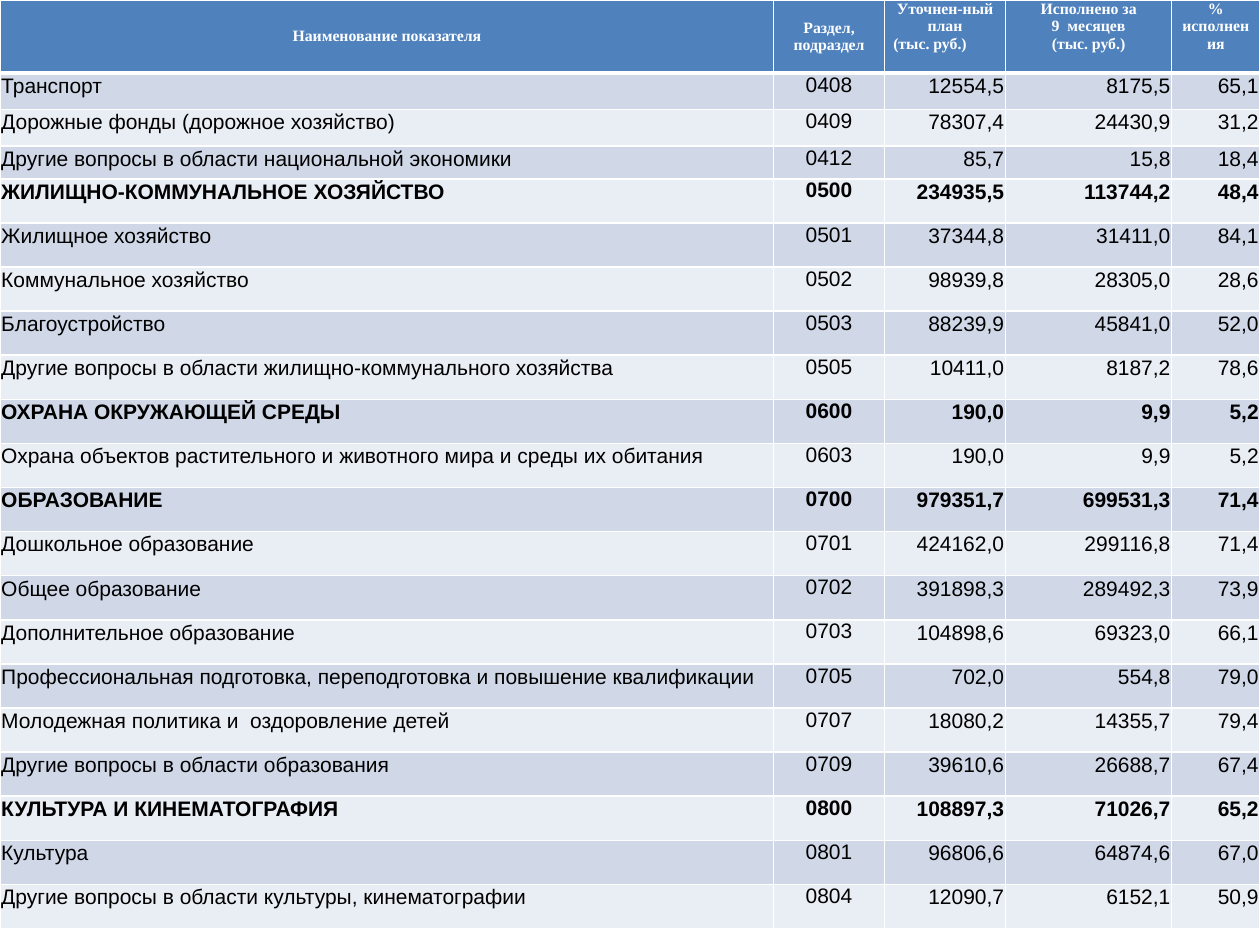
"""Build a slide with a table of budget execution by section."""
from typing import NamedTuple

from lxml.etree import SubElement
from pptx import Presentation
from pptx.dml.color import RGBColor
from pptx.enum.text import MSO_ANCHOR, PP_ALIGN as Align
from pptx.oxml.ns import qn
from pptx.util import Inches, Pt

COLORS = {"header": "4F81BD", "odd": "D0D8E8", "even": "E9EDF4",
          "text": "000000", "white": "FFFFFF"}


class Style(NamedTuple):
    font: str
    size: float
    color: str
    fill: str
    bold: bool


class Column(NamedTuple):
    width: float
    header: tuple[str, ...]
    anchor: MSO_ANCHOR
    align: Align
    margin: float
    top: float


class Item(NamedTuple):
    name: str
    code: str
    plan: str
    actual: str
    percent: str


COLUMNS = [
    Column(6.14, ("Наименование показателя",), MSO_ANCHOR.MIDDLE, Align.LEFT, 0.01, 0.01),
    Column(0.88, ("Раздел, подраздел",), MSO_ANCHOR.MIDDLE, Align.CENTER, 0.07, 0),
    Column(0.96, ("Уточнен-ный план", "(тыс. руб.)"), MSO_ANCHOR.TOP, Align.RIGHT, 0.01, 0.01),
    Column(1.32, ("Исполнено за", "9  месяцев", "(тыс. руб.)"), MSO_ANCHOR.TOP,
           Align.RIGHT, 0.01, 0.01),
    Column(0.7, ("% исполнения",), MSO_ANCHOR.TOP, Align.RIGHT, 0.01, 0.01),
]

ITEMS = [
    Item("Транспорт", "0408", "12554,5", "8175,5", "65,1"),
    Item("Дорожные фонды (дорожное хозяйство)", "0409", "78307,4", "24430,9", "31,2"),
    Item("Другие вопросы в области национальной экономики", "0412", "85,7", "15,8", "18,4"),
    Item("ЖИЛИЩНО-КОММУНАЛЬНОЕ ХОЗЯЙСТВО", "0500", "234935,5", "113744,2", "48,4"),
    Item("Жилищное хозяйство", "0501", "37344,8", "31411,0", "84,1"),
    Item("Коммунальное хозяйство", "0502", "98939,8", "28305,0", "28,6"),
    Item("Благоустройство", "0503", "88239,9", "45841,0", "52,0"),
    Item("Другие вопросы в области жилищно-коммунального хозяйства", "0505",
         "10411,0", "8187,2", "78,6"),
    Item("ОХРАНА ОКРУЖАЮЩЕЙ СРЕДЫ", "0600", "190,0", "9,9", "5,2"),
    Item("Охрана объектов растительного и животного мира и среды их обитания", "0603",
         "190,0", "9,9", "5,2"),
    Item("ОБРАЗОВАНИЕ", "0700", "979351,7", "699531,3", "71,4"),
    Item("Дошкольное образование", "0701", "424162,0", "299116,8", "71,4"),
    Item("Общее образование", "0702", "391898,3", "289492,3", "73,9"),
    Item("Дополнительное образование", "0703", "104898,6", "69323,0", "66,1"),
    Item("Профессиональная подготовка, переподготовка и повышение квалификации", "0705",
         "702,0", "554,8", "79,0"),
    Item("Молодежная политика и  оздоровление детей", "0707", "18080,2", "14355,7", "79,4"),
    Item("Другие вопросы в области образования", "0709", "39610,6", "26688,7", "67,4"),
    Item("КУЛЬТУРА И КИНЕМАТОГРАФИЯ", "0800", "108897,3", "71026,7", "65,2"),
    Item("Культура", "0801", "96806,6", "64874,6", "67,0"),
    Item("Другие вопросы в области культуры, кинематографии", "0804",
         "12090,7", "6152,1", "50,9"),
]

HEIGHTS = [0.58, 0.29, 0.29, 0.26] + [0.35] * 17
HEADER = Style("Times New Roman", 9, "white", "header", True)


def rgb(name: str) -> RGBColor:
    return RGBColor.from_string(COLORS[name])


def set_borders(cell, top: float, bottom: float) -> None:
    tc_pr = cell._tc.get_or_add_tcPr()
    for side, width in (("L", 1), ("R", 1), ("T", top), ("B", bottom)):
        ln = SubElement(tc_pr, qn(f"a:ln{side}"), w=str(Pt(width)))
        fill = SubElement(ln, qn("a:solidFill"))
        SubElement(fill, qn("a:srgbClr"), val=COLORS["white"])


def write_cell(cell, lines: tuple[str, ...], style: Style, align: Align,
               margin: float, top: float) -> None:
    cell.margin_left = cell.margin_right = Inches(margin)
    cell.margin_top, cell.margin_bottom = Inches(top), 0
    cell.fill.solid()
    cell.fill.fore_color.rgb = rgb(style.fill)
    tf = cell.text_frame
    for i, line in enumerate(lines):
        p = tf.add_paragraph() if i else tf.paragraphs[0]
        p.alignment = align
        r = p.add_run()
        r.text = line
        r.font.name, r.font.size, r.font.bold = style.font, Pt(style.size), style.bold
        r.font.color.rgb = rgb(style.color)


def add_budget_table(s) -> None:
    table = s.shapes.add_table(len(ITEMS) + 1, len(COLUMNS), 0, 0,
                               Inches(10), Inches(sum(HEIGHTS))).table
    for row, height in zip(table.rows, HEIGHTS):
        row.height = Inches(height)
    for c, col in enumerate(COLUMNS):
        table.columns[c].width = Inches(col.width)
        cell = table.cell(0, c)
        set_borders(cell, 1, 3)
        write_cell(cell, col.header, HEADER, Align.CENTER, 0.07, 0)
        cell.vertical_anchor = col.anchor
    table.cell(0, 2).text_frame.paragraphs[1].alignment = Align.LEFT
    for n, item in enumerate(ITEMS, 1):
        style = Style("Arial", 12, "text", "odd" if n % 2 else "even",
                      item.code.endswith("00"))
        for c, (col, text) in enumerate(zip(COLUMNS, item)):
            cell = table.cell(n, c)
            set_borders(cell, 3 if n == 1 else 1, 1)
            write_cell(cell, (text,), style, col.align, col.margin, col.top)


def main() -> None:
    prs = Presentation()
    prs.slide_width, prs.slide_height = Inches(10), Inches(7.5)
    s = prs.slides.add_slide(prs.slide_layouts[6])
    add_budget_table(s)
    prs.save("out.pptx")


if __name__ == "__main__":
    main()
